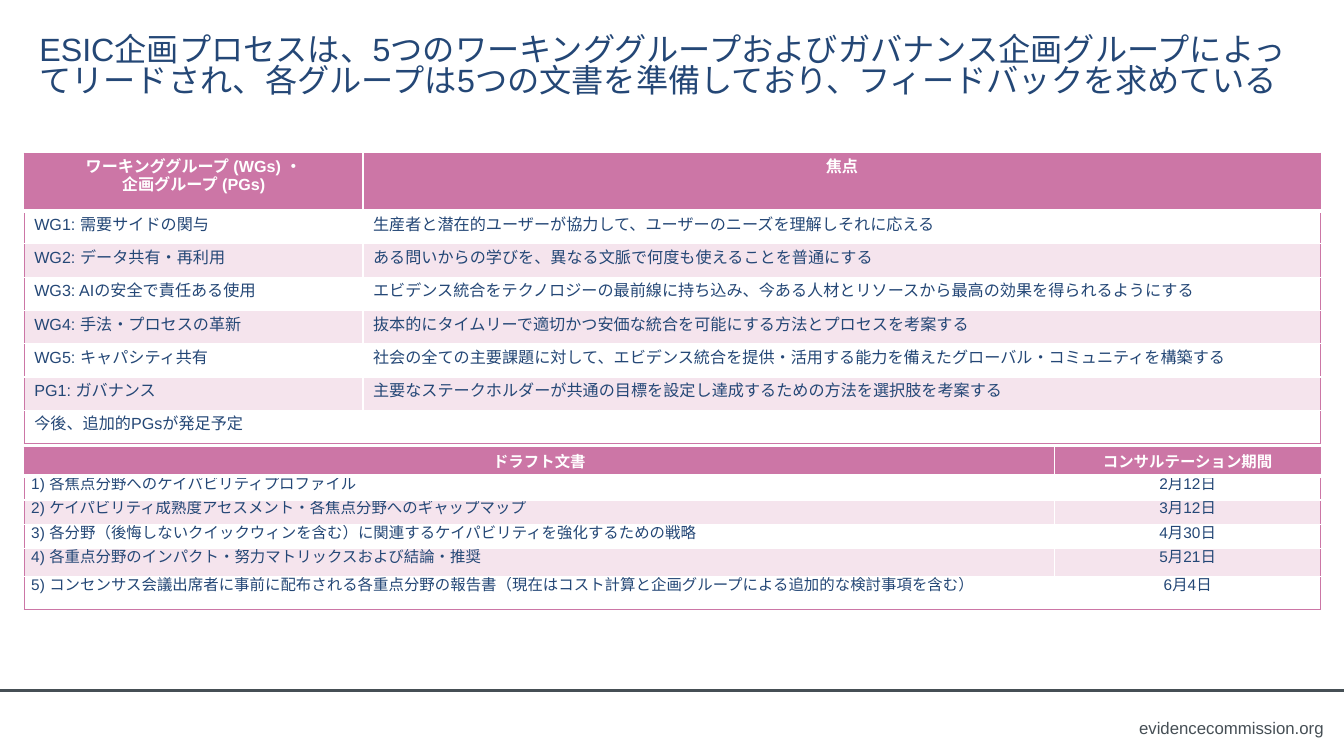
from lxml import etree
from pptx import Presentation, util as u
from pptx.dml.color import RGBColor
from pptx.enum import text
from pptx.oxml import ns

HEADLINE = "ESIC企画プロセスは、5つのワーキンググループおよびガバナンス企画グループによってリードされ、各グループは5つの文書を準備しており、フィードバックを求めている"
SITE = "evidencecommission.org"
GROUPS = [
    ("ワーキンググループ (WGs) ・\n企画グループ (PGs)", "焦点"),
    ("WG1: 需要サイドの関与", "生産者と潜在的ユーザーが協力して、ユーザーのニーズを理解しそれに応える"),
    ("WG2: データ共有・再利用", "ある問いからの学びを、異なる文脈で何度も使えることを普通にする"),
    ("WG3: AIの安全で責任ある使用", "エビデンス統合をテクノロジーの最前線に持ち込み、今ある人材とリソースから最高の効果を得られるようにする"),
    ("WG4: 手法・プロセスの革新", "抜本的にタイムリーで適切かつ安価な統合を可能にする方法とプロセスを考案する"),
    ("WG5: キャパシティ共有", "社会の全ての主要課題に対して、エビデンス統合を提供・活用する能力を備えたグローバル・コミュニティを構築する"),
    ("PG1: ガバナンス", "主要なステークホルダーが共通の目標を設定し達成するための方法を選択肢を考案する"),
    ("今後、追加的PGsが発足予定", ""),
]
DRAFTS = [
    ("ドラフト文書", "コンサルテーション期間"),
    ("1) 各焦点分野へのケイパビリティプロファイル", "2月12日"),
    ("2) ケイパビリティ成熟度アセスメント・各焦点分野へのギャップマップ", "3月12日"),
    ("3) 各分野（後悔しないクイックウィンを含む）に関連するケイパビリティを強化するための戦略", "4月30日"),
    ("4) 各重点分野のインパクト・努力マトリックスおよび結論・推奨", "5月21日"),
    ("5) コンセンサス会議出席者に事前に配布される各重点分野の報告書（現在はコスト計算と企画グループによる追加的な検討事項を含む）", "6月4日"),
]

NAVY = RGBColor(0x24, 0x47, 0x76)
PINK = RGBColor(0xCC, 0x76, 0xA6)
PALE = RGBColor(0xF5, 0xE4, 0xED)
WHITE = RGBColor(0xFF, 0xFF, 0xFF)
SLATE = RGBColor(0x46, 0x4F, 0x55)
FONT = "Arial"
LEFT, WIDTH = 0.24, 12.86
CENTER, START, END = text.PP_ALIGN.CENTER, text.PP_ALIGN.LEFT, text.PP_ALIGN.RIGHT


def style(paragraph, size, color, align, bold=False):
    paragraph.alignment = align
    for run in paragraph.runs:
        run.font.size, run.font.bold, run.font.name = u.Pt(size), bold, FONT
        run.font.color.rgb = color
        etree.SubElement(run._r.rPr, ns.qn("a:ea"), typeface=FONT)


def draw_border(cell, side, color, points):
    props = cell._tc.get_or_add_tcPr()
    edge = etree.Element(ns.qn(f"a:ln{side}"), w=str(u.Pt(points)))
    paint = etree.SubElement(edge, ns.qn("a:solidFill"))
    etree.SubElement(paint, ns.qn("a:srgbClr"), val=str(color))
    props.insert("LRTB".index(side), edge)


def add_grid(slide, entries, top, columns, heights, size, inset, centered):
    grid = slide.shapes.add_table(len(entries), len(columns), u.Inches(LEFT), u.Inches(top),
                                  u.Inches(WIDTH), u.Inches(sum(heights))).table
    for column, width in zip(grid.columns, columns):
        column.width = u.Inches(width)
    last_row, last_column = len(entries) - 1, len(columns) - 1
    for r, (entry, height) in enumerate(zip(entries, heights)):
        grid.rows[r].height = u.Inches(height)
        header = r == 0
        for c, wording in enumerate(entry):
            cell = grid.cell(r, c)
            cell.margin_left = cell.margin_right = u.Inches(inset[0])
            cell.margin_top = cell.margin_bottom = u.Inches(inset[1])
            if header and not inset[1]:
                cell.vertical_anchor = text.MSO_ANCHOR.MIDDLE
            cell.fill.solid()
            cell.fill.fore_color.rgb = PINK if header else WHITE if r % 2 else PALE
            cell.text_frame.text = wording
            align = CENTER if header or c in centered else START
            for paragraph in cell.text_frame.paragraphs:
                style(paragraph, size, WHITE if header else NAVY, align, header)
                paragraph.font.size = u.Pt(size)
            outer = {"L": c == 0, "R": c == last_column, "T": header, "B": r == last_row}
            for side, is_outer in outer.items():
                draw_border(cell, side, PINK if is_outer else WHITE, 3 if header and side == "B" else 1)


def main():
    deck = Presentation()
    deck.slide_width, deck.slide_height = u.Inches(13.33), u.Inches(7.5)
    slide = deck.slides.add_slide(deck.slide_layouts[5])

    rule = slide.shapes.add_connector(1, 0, u.Inches(6.85), deck.slide_width, u.Inches(6.85))
    rule.line.color.rgb, rule.line.width = SLATE, u.Pt(2)
    etree.SubElement(rule._element.spPr, ns.qn("a:effectLst"))

    site = slide.shapes.add_textbox(u.Inches(11.17), u.Inches(7.07), u.Inches(2.06), u.Inches(0.3))
    site.text_frame.word_wrap = True
    site.text_frame.text = SITE
    style(site.text_frame.paragraphs[0], 12, SLATE, END)

    headline = slide.shapes.title
    headline.left, headline.top = u.Inches(0.29), u.Inches(0.12)
    headline.width, headline.height = u.Inches(12.8), u.Inches(1.1)
    headline.text_frame.text = HEADLINE
    headline.text_frame.auto_size = text.MSO_AUTO_SIZE.NONE
    headline.text_frame.vertical_anchor = text.MSO_ANCHOR.MIDDLE
    style(headline.text_frame.paragraphs[0], 23, NAVY, START)
    headline.text_frame.paragraphs[0].line_spacing = 0.8

    add_grid(slide, GROUPS, 1.52, (3.36, 9.5), [0.57] + [0.33] * 7, 11.5, (0.1, 0.05), ())
    add_grid(slide, DRAFTS, 4.44, (10.22, 2.64), [0.28] + [0.24] * 3 + [0.28, 0.33], 11, (0.07, 0), (1,))

    deck.save("out.pptx")


if __name__ == "__main__":
    main()
